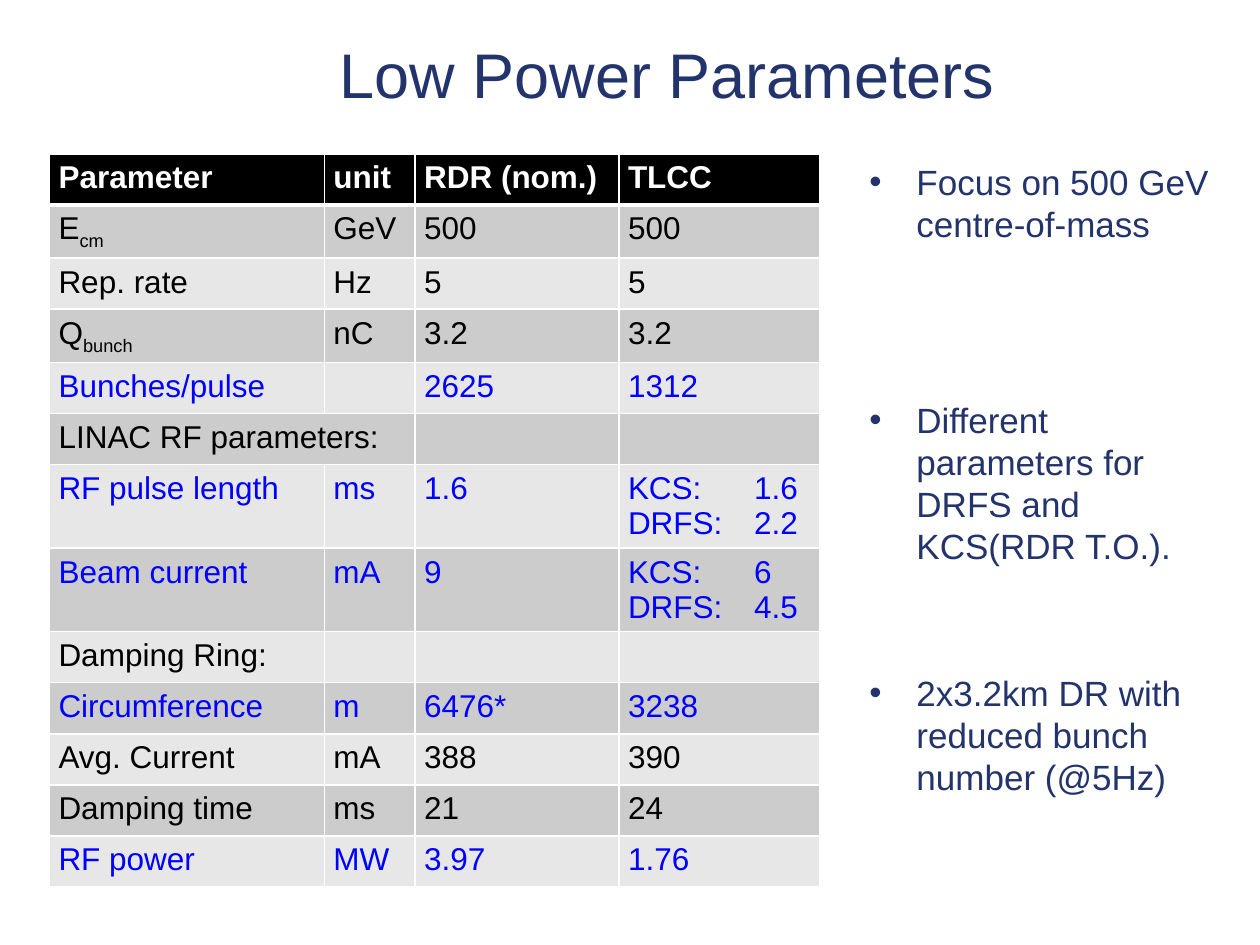
"""Builds the slide comparing low power machine parameters."""
from lxml.etree import SubElement
from pptx import Presentation
from pptx.dml.color import RGBColor
from pptx.enum.text import MSO_ANCHOR, MSO_AUTO_SIZE, PP_ALIGN
from pptx.oxml.ns import qn
from pptx.util import Cm, Pt

BLACK, BLUE, NAVY, WHITE = "000000", "0000FF", "23346C", "FFFFFF"
DARK_BAND, LIGHT_BAND = "CCCCCC", "E7E7E7"

HEADER = ("Parameter", "unit", "RDR (nom.)", "TLCC")
PARAMETERS = [
    (BLACK, "E_cm", "GeV", "500", "500"),
    (BLACK, "Rep. rate", "Hz", "5", "5"),
    (BLACK, "Q_bunch", "nC", "3.2", "3.2"),
    (BLUE, "Bunches/pulse", "", "2625", "1312"),
    (BLACK, "LINAC RF parameters:", "", "", ""),
    (BLUE, "RF pulse length", "ms", "1.6", "KCS: \t1.6\nDRFS: \t2.2"),
    (BLUE, "Beam current", "mA", "9", "KCS: \t6\nDRFS: \t4.5"),
    (BLACK, "Damping Ring:", "", "", ""),
    (BLUE, "Circumference", "m", "6476*", "3238"),
    (BLACK, "Avg. Current", "mA", "388", "390"),
    (BLACK, "Damping time", "ms", "21", "24"),
    (BLUE, "RF power", "MW", "3.97", "1.76"),
]
COLUMN_WIDTHS = (5.54, 1.83, 4.11, 4.04)
ROW_HEIGHT = 1.03
LINAC_ROW = 5
REMARKS = [
    ("Focus on 500 GeV centre-of-mass", 0),
    ("Different parameters for DRFS and KCS(RDR T.O.).", 88),
    ("2x3.2km DR with reduced bunch number (@5Hz)", 60),
]


def rgb(code):
    return RGBColor.from_string(code)


class ParameterSlide:
    def __init__(self, deck, font="Arial"):
        self.font = font
        self.slide = deck.slides.add_slide(deck.slide_layouts[1])

    def style(self, paragraph, size, color, bold=False):
        font = paragraph.font
        font.name, font.size, font.bold = self.font, Pt(size), bold
        font.color.rgb = rgb(color)

    def place(self, holder, left, top, width, height):
        holder.left, holder.top = Cm(left), Cm(top)
        holder.width, holder.height = Cm(width), Cm(height)
        frame = holder.text_frame
        frame.word_wrap = True
        frame.auto_size = MSO_AUTO_SIZE.NONE
        return frame

    def title(self, wording, *box):
        frame = self.place(self.slide.shapes.title, *box)
        frame.vertical_anchor = MSO_ANCHOR.MIDDLE
        heading = frame.paragraphs[0]
        heading.text = wording
        heading.alignment = PP_ALIGN.CENTER
        self.style(heading, 36, NAVY)

    def bullets(self, remarks, *box):
        frame = self.place(self.slide.placeholders[1], *box)
        for index, (wording, gap) in enumerate(remarks):
            remark = frame.add_paragraph() if index else frame.paragraphs[0]
            remark.text = wording
            properties = remark._p.get_or_add_pPr()
            properties.set("marL", str(Cm(0.95)))
            properties.set("indent", str(-Cm(0.95)))
            SubElement(properties, qn("a:buChar"), char="•")
            remark.space_before = Pt(gap)
            remark.line_spacing = Pt(24)
            self.style(remark, 20, NAVY)

    def borders(self, cell, **widths):
        properties = cell._tc.get_or_add_tcPr()
        for side in "LRTB":
            line = SubElement(properties, qn(f"a:ln{side}"), w=str(Pt(widths.get(side, 1))))
            SubElement(SubElement(line, qn("a:solidFill")), qn("a:srgbClr"), val=WHITE)

    def cell(self, cell, wording, fill, color, bold=False, **widths):
        self.borders(cell, **widths)
        cell.fill.solid()
        cell.fill.fore_color.rgb = rgb(fill)
        cell.margin_left = cell.margin_right = Cm(0.18)
        cell.margin_top = cell.margin_bottom = Cm(0.13)
        symbol, _, subscript = wording.partition("_")
        cell.text = symbol
        if subscript:
            suffix = cell.text_frame.paragraphs[0].add_run()
            suffix.text = subscript
            suffix._r.get_or_add_rPr().set("baseline", "-25000")
        for paragraph in cell.text_frame.paragraphs:
            self.style(paragraph, 18, color, bold)

    def table(self, header, parameters, left, top):
        rows, columns = len(parameters) + 1, len(header)
        table = self.slide.shapes.add_table(
            rows, columns, Cm(left), Cm(top),
            Cm(sum(COLUMN_WIDTHS)), Cm(rows * ROW_HEIGHT)).table
        for column, width in zip(table.columns, COLUMN_WIDTHS):
            column.width = Cm(width)
        for column, wording in enumerate(header):
            self.cell(table.cell(0, column), wording, BLACK, WHITE, True, B=3)
        for row, (color, *values) in enumerate(parameters, 1):
            band = DARK_BAND if row % 2 else LIGHT_BAND
            for column, wording in enumerate(values):
                self.cell(table.cell(row, column), wording, band, color,
                          T=3 if row == 1 else 1)
        table.cell(LINAC_ROW, 0).merge(table.cell(LINAC_ROW, 1))


def main():
    deck = Presentation()
    deck.slide_width, deck.slide_height = Cm(25.4), Cm(19.05)
    page = ParameterSlide(deck)
    page.title("Low Power Parameters", 3.6, 0.2, 19.7, 2.54)
    page.table(HEADER, PARAMETERS, 1, 3.1)
    page.bullets(REMARKS, 17.27, 3.1, 7.62, 14.2)
    deck.save("out.pptx")


if __name__ == "__main__":
    main()
